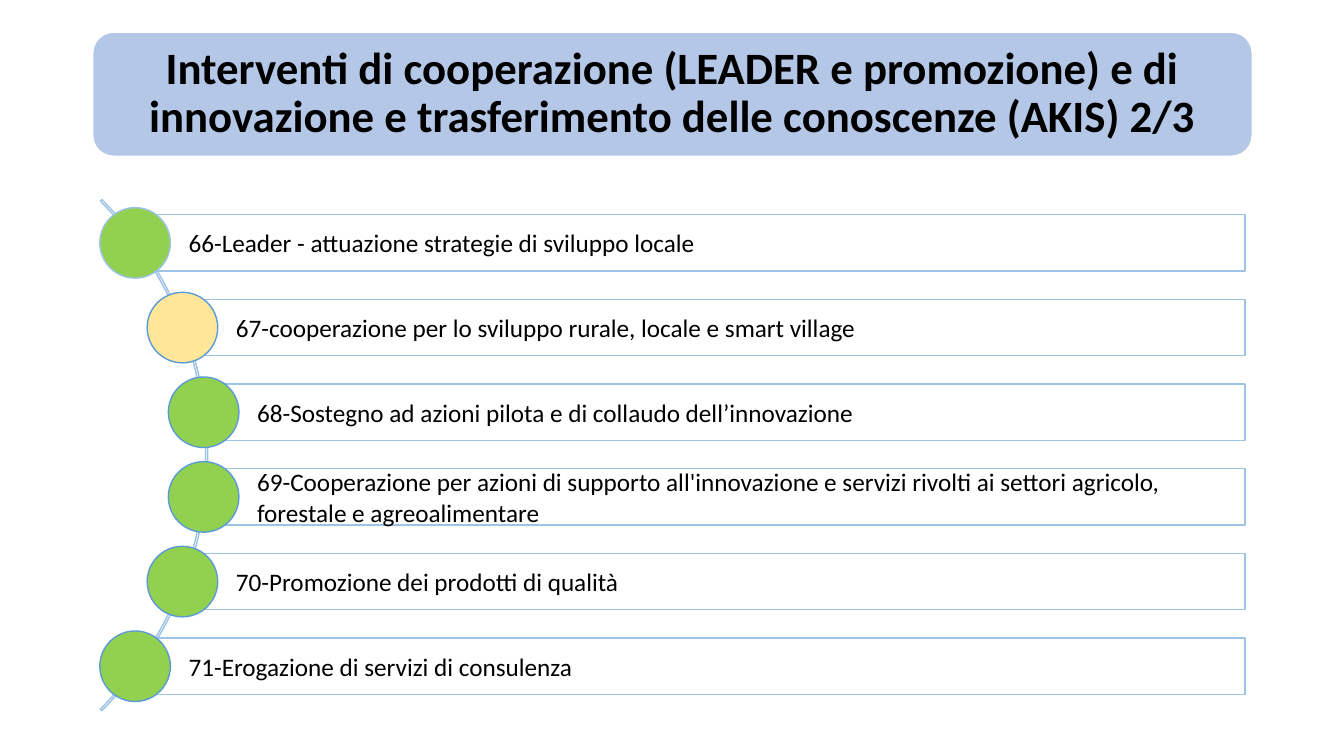
from dataclasses import dataclass

import pptx
import pptx.dml.color
import pptx.enum.shapes
import pptx.enum.text
import pptx.util

Inches = pptx.util.Inches
SHAPES = pptx.enum.shapes.MSO_SHAPE
ALIGN = pptx.enum.text.PP_ALIGN


@dataclass(frozen=True)
class Theme:
    font: str = "Calibri"
    title_size: int = 32
    row_size: int = 18
    text: str = "000000"
    white: str = "FFFFFF"
    banner: str = "B4C7E7"
    pale_line: str = "9DC3E6"
    strong_line: str = "5B9BD5"
    green: str = "92D050"
    yellow: str = "FFE699"


THEME = Theme()

TITLE = ("Interventi di cooperazione (LEADER e promozione) e di innovazione "
         "e trasferimento delle conoscenze (AKIS) 2/3")

# Text, centre of the circle, circle fill, circle outline
ROWS = [
    ("66-Leader - attuazione strategie di sviluppo locale",
     1.34, THEME.green, THEME.pale_line),
    ("67-cooperazione per lo sviluppo rurale, locale e smart village",
     1.81, THEME.yellow, THEME.strong_line),
    ("68-Sostegno ad azioni pilota e di collaudo dell’innovazione",
     2.02, THEME.green, THEME.strong_line),
    ("69-Cooperazione per azioni di supporto all'innovazione e servizi "
     "rivolti ai settori agricolo, forestale e agreoalimentare",
     2.02, THEME.green, THEME.strong_line),
    ("70-Promozione dei prodotti di qualità",
     1.81, THEME.green, THEME.strong_line),
    ("71-Erogazione di servizi di consulenza",
     1.34, THEME.green, THEME.strong_line),
]
FIRST_CENTRE, ROW_PITCH = 2.41, 0.84
ROW_HEIGHT, ROW_RIGHT = 0.56, 12.35
CIRCLE = 0.7


def rgb(value):
    return pptx.dml.color.RGBColor.from_string(value)


def set_attributes(target, values):
    for name, value in values.items():
        setattr(target, name, value)


def add_outlined(slide, kind, place, line, fill=None):
    """Add a preset shape with a thin outline; without a fill it is see-through."""
    shape = slide.shapes.add_shape(kind, *(Inches(length) for length in place))
    shape.shadow.inherit = False
    shape.line.color.rgb = rgb(line)
    shape.line.width = pptx.util.Pt(1)
    if fill:
        shape.fill.solid()
        shape.fill.fore_color.rgb = rgb(fill)
    else:
        shape.fill.background()
    return shape


def write(shape, text, insets, size, bold=False, align=ALIGN.LEFT, spacing=1.0):
    """Fill a shape with one paragraph; insets are left, top, right, bottom."""
    frame = shape.text_frame
    left, top, right, bottom = (Inches(inset) for inset in insets)
    set_attributes(frame, {
        "word_wrap": True,
        "vertical_anchor": pptx.enum.text.MSO_ANCHOR.MIDDLE,
        "margin_left": left, "margin_top": top,
        "margin_right": right, "margin_bottom": bottom,
    })
    para = frame.paragraphs[0]
    set_attributes(para, {"alignment": align, "line_spacing": spacing})
    span = para.add_run()
    span.text = text
    set_attributes(span.font, {
        "name": THEME.font, "size": pptx.util.Pt(size), "bold": bold})
    span.font.color.rgb = rgb(THEME.text)


def add_title(slide):
    banner = add_outlined(slide, SHAPES.ROUNDED_RECTANGLE,
                          (0.92, 0.32, 11.5, 1.23), THEME.white, THEME.banner)
    write(banner, TITLE, (0.19,) * 4, THEME.title_size,
          bold=True, align=ALIGN.CENTER, spacing=0.9)


def add_arc(slide):
    arc = add_outlined(slide, SHAPES.BLOCK_ARC,
                       (-5.11, 0.93, 7.17, 7.17), THEME.pale_line)
    for index, value in enumerate((189, 27, 0.003)):
        arc.adjustments[index] = value


def add_row(slide, middle, text, centre, fill, line):
    bar = add_outlined(
        slide, SHAPES.RECTANGLE,
        (centre, middle - ROW_HEIGHT / 2, ROW_RIGHT - centre, ROW_HEIGHT),
        THEME.pale_line)
    write(bar, text, (0.53, 0.05, 0.05, 0.05), THEME.row_size)
    add_outlined(slide, SHAPES.OVAL,
                 (centre - CIRCLE / 2, middle - CIRCLE / 2, CIRCLE, CIRCLE),
                 line, fill)


def main():
    deck = pptx.Presentation()
    set_attributes(deck, {"slide_width": Inches(13.33),
                          "slide_height": Inches(7.5)})
    page = deck.slides.add_slide(deck.slide_layouts[6])
    add_title(page)
    add_arc(page)
    for index, row in enumerate(ROWS):
        add_row(page, FIRST_CENTRE + index * ROW_PITCH, *row)
    deck.save("out.pptx")


if __name__ == "__main__":
    main()
